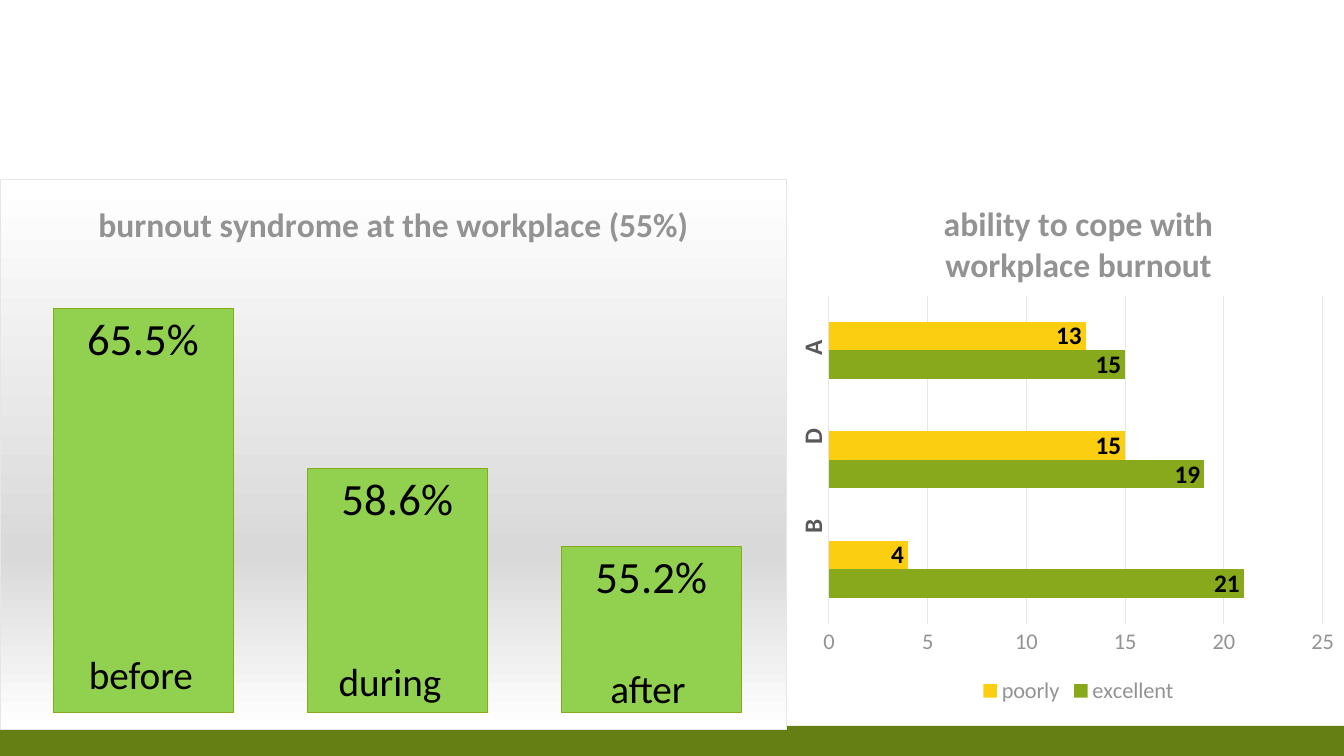
from dataclasses import dataclass

from lxml.etree import SubElement
from pptx import Presentation
from pptx.chart.data import CategoryChartData
from pptx.dml.color import RGBColor
from pptx.enum.chart import XL_CHART_TYPE, XL_LABEL_POSITION, XL_LEGEND_POSITION, XL_TICK_MARK
from pptx.enum.shapes import MSO_SHAPE
from pptx.enum.text import MSO_ANCHOR, PP_ALIGN
from pptx.oxml import parse_xml
from pptx.oxml.ns import nsdecls, qn
from pptx.util import Emu, Pt


@dataclass(frozen=True)
class Theme:
    font: str = "Calibri"
    band: str = "657F14"
    lime: str = "92D050"
    green: str = "87A91B"
    yellow: str = "FBCE11"
    black: str = "000000"
    dark: str = "595959"
    grey: str = "939393"
    rule: str = "E6E6E6"
    white: str = "FFFFFF"
    silver: str = "D9D9D9"
    title_size: int = 24
    value_size: int = 32
    phase_size: int = 28
    bar_size: int = 18
    axis_size: int = 16
    base_size: int = 10
    line_width: float = 0.75


THEME = Theme()
EMU_PER_PX = 914400 / 100.8


def px(length):
    return Emu(round(length * EMU_PER_PX))


def set_font(font, size, color, bold=False):
    font.name = THEME.font
    font.size = Pt(size)
    font.bold = bold
    font.color.rgb = RGBColor.from_string(color)


def set_line(line, color):
    line.color.rgb = RGBColor.from_string(color)
    line.width = Pt(THEME.line_width)


def add_label(slide, box, text, size, color, bold=False):
    shape = slide.shapes.add_textbox(*map(px, box))
    frame = shape.text_frame
    frame.word_wrap = True
    paragraph = frame.paragraphs[0]
    paragraph.text = text
    paragraph.alignment = PP_ALIGN.CENTER
    set_font(paragraph.font, size, color, bold)
    return frame


def add_titled_chart(slide, box, kind, series, title, gap, layout, background):
    data = CategoryChartData()
    data.categories = ["1", "2", "3"]
    for name, values in series:
        data.add_series(name, values)
    chart = slide.shapes.add_chart(kind, *map(px, box), data).chart
    set_font(chart.font, THEME.base_size, THEME.dark)
    chart.has_title = True
    paragraph = chart.chart_title.text_frame.paragraphs[0]
    paragraph.text = title
    set_font(paragraph.font, THEME.title_size, THEME.grey, True)
    chart.chart_title.include_in_layout = False
    chart.category_axis.visible = False
    plot = chart.plots[0]
    plot.gap_width = gap
    plot.vary_by_categories = False
    chart_element = chart.element.find(qn("c:chart"))
    chart_element.addnext(parse_xml(f'<c:spPr {nsdecls("c", "a")}>{background}</c:spPr>'))
    plot_area = chart_element.find(qn("c:plotArea"))
    for previous in plot_area.findall(qn("c:layout")):
        plot_area.remove(previous)
    layout_element = parse_xml(f'<c:layout {nsdecls("c")}><c:manualLayout/></c:layout>')
    plot_area.insert(0, layout_element)
    settings = [("layoutTarget", "inner"), ("xMode", "edge"), ("yMode", "edge")]
    for tag, value in settings + list(zip("xywh", layout)):
        SubElement(layout_element[0], qn(f"c:{tag}")).set("val", str(value))
    return chart


def style_series(series, color, size, bold=False):
    series.invert_if_negative = False
    series.format.fill.solid()
    series.format.fill.fore_color.rgb = RGBColor.from_string(color)
    labels = series.data_labels
    labels.show_value = True
    labels.position = XL_LABEL_POSITION.INSIDE_END
    set_font(labels.font, size, THEME.black, bold)
    return labels


def add_burnout_region(slide, box):
    left, top, width, height = box
    stops = "".join(
        f'<a:gs pos="{place * 1000}"><a:srgbClr val="{color}"/></a:gs>'
        for place, color in ((0, THEME.white), (68, THEME.silver), (100, THEME.white))
    )
    background = (
        f'<a:gradFill><a:gsLst>{stops}</a:gsLst><a:lin ang="5400000" scaled="0"/></a:gradFill>'
        f'<a:ln w="{Pt(THEME.line_width)}"><a:solidFill><a:srgbClr val="{THEME.rule}"/></a:solidFill></a:ln>'
    )
    chart = add_titled_chart(
        slide, box, XL_CHART_TYPE.COLUMN_CLUSTERED, [("Series 1", (65.5, 58.6, 55.2))],
        "burnout syndrome at the workplace (55%)", 41, (0.02, 0.13, 0.97, 0.84), background,
    )
    chart.has_legend = False
    axis = chart.value_axis
    axis.visible = False
    axis.has_major_gridlines = False
    axis.minimum_scale, axis.maximum_scale = 48, 68
    series = chart.plots[0].series[0]
    labels = style_series(series, THEME.lime, THEME.value_size)
    labels.number_format = '0.0"%"'
    labels.number_format_is_linked = False
    set_line(series.format.line, THEME.green)
    for text, x, y in (("before", 51, 466), ("during", 300, 473), ("after", 558, 480)):
        add_label(slide, (left + x, top + y, 180, 58), text, THEME.phase_size, THEME.black)


def add_coping_region(slide, box):
    left, top, width, height = box
    chart = add_titled_chart(
        slide, box, XL_CHART_TYPE.BAR_CLUSTERED,
        [("excellent", (21, 19, 15)), ("poorly", (4, 15, 13))],
        "ability to cope with workplace burnout", 182, (0.03, 0.22, 0.93, 0.62),
        "<a:noFill/><a:ln><a:noFill/></a:ln>",
    )
    axis = chart.value_axis
    axis.minimum_scale, axis.maximum_scale, axis.major_unit = 0, 25, 5
    axis.major_tick_mark = axis.minor_tick_mark = XL_TICK_MARK.NONE
    axis.format.line.fill.background()
    set_line(axis.major_gridlines.format.line, THEME.rule)
    set_font(axis.tick_labels.font, THEME.axis_size, THEME.grey)
    chart.has_legend = True
    chart.legend.position = XL_LEGEND_POSITION.BOTTOM
    chart.legend.include_in_layout = False
    set_font(chart.legend.font, THEME.axis_size, THEME.grey)
    for series, color in zip(chart.plots[0].series, (THEME.green, THEME.yellow)):
        style_series(series, color, THEME.bar_size, True)
    for index, group in enumerate("ADB"):
        group_box = (left - 26, top + 144 + 89 * index, 50, 50)
        frame = add_label(slide, group_box, group, THEME.bar_size, THEME.dark, True)
        frame.vertical_anchor = MSO_ANCHOR.MIDDLE
        frame._txBody.bodyPr.set("vert", "vert270")


def add_footer_band(slide, box):
    shape = slide.shapes.add_shape(MSO_SHAPE.RECTANGLE, *map(px, box))
    shape.shadow.inherit = False
    shape.fill.solid()
    shape.fill.fore_color.rgb = RGBColor.from_string(THEME.band)
    shape.line.fill.background()


def main():
    presentation = Presentation()
    presentation.slide_width, presentation.slide_height = px(1344), px(756)
    slide = presentation.slides.add_slide(presentation.slide_layouts[6])
    add_footer_band(slide, (0, 726, 1344, 30))
    add_burnout_region(slide, (0, 179, 787, 551))
    add_coping_region(slide, (813, 179, 531, 530))
    presentation.save("out.pptx")


if __name__ == "__main__":
    main()
